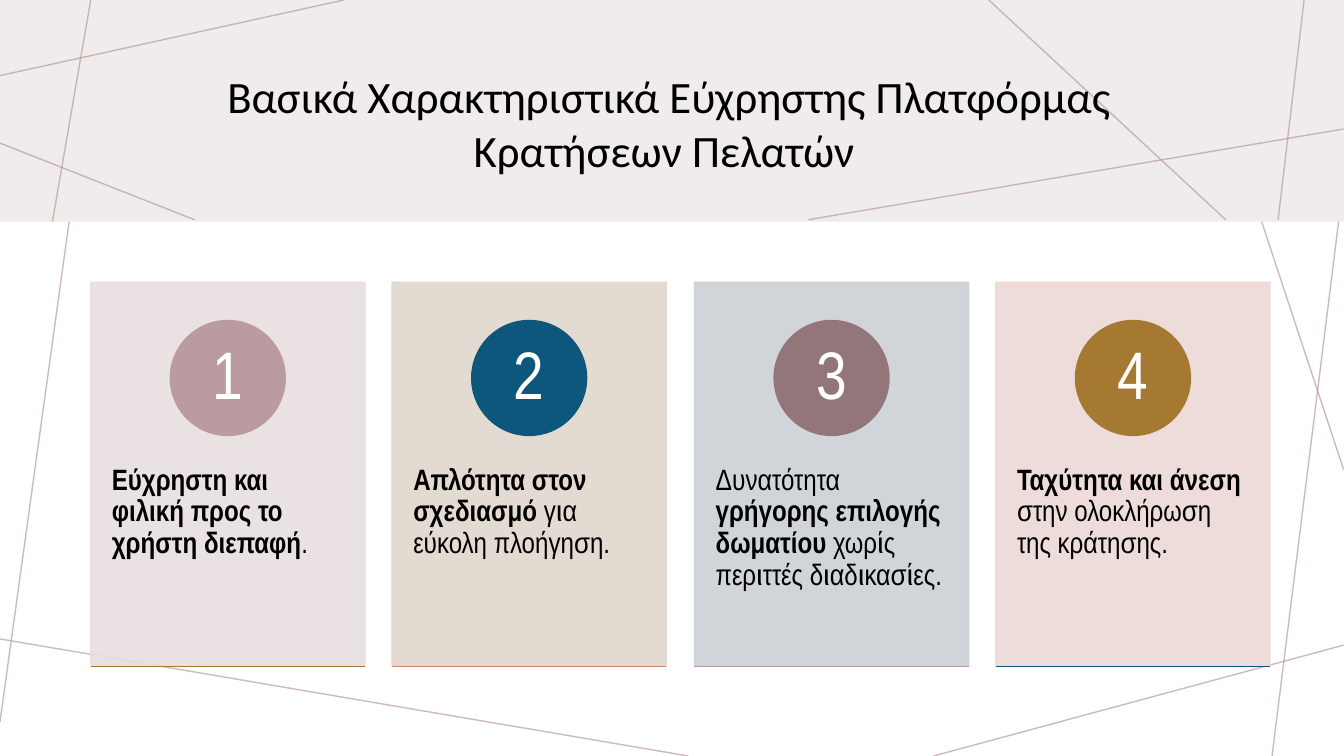
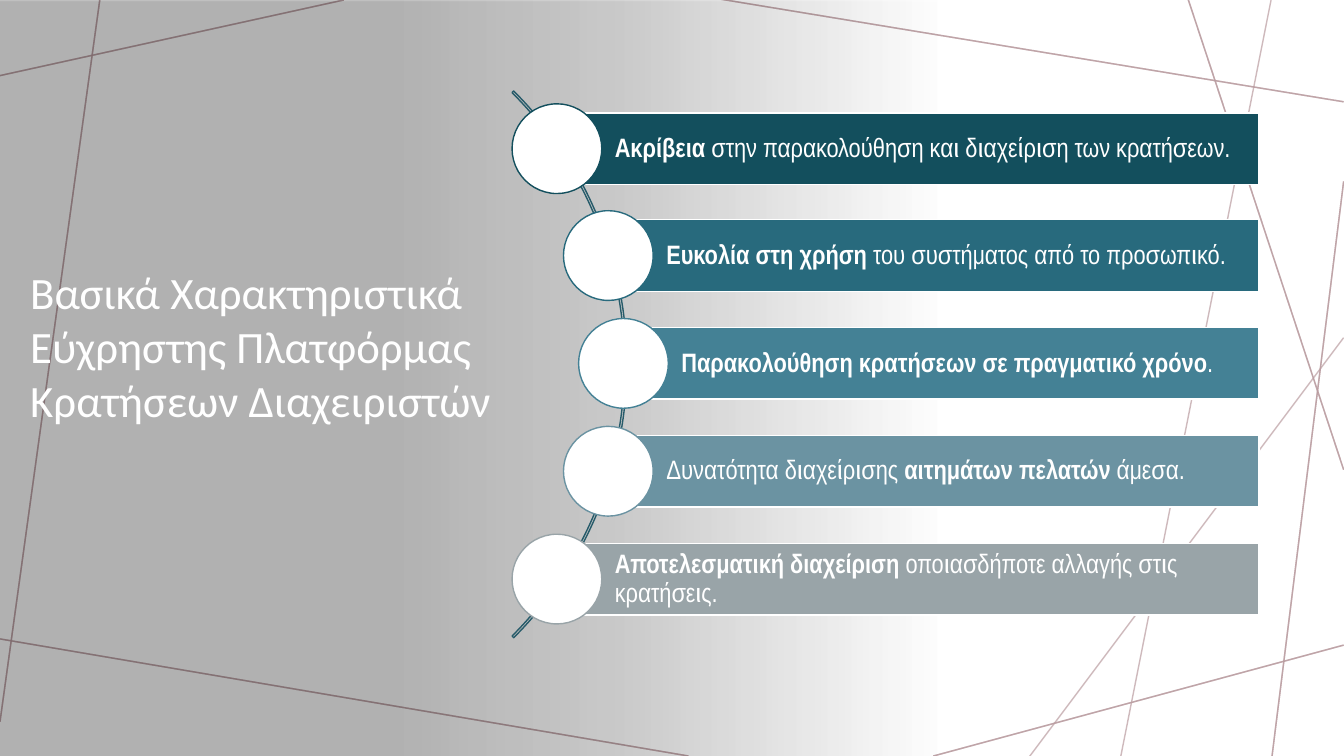
from lxml.etree import SubElement as Sub
from pptx import Presentation as Deck
from pptx.dml.color import RGBColor as Rgb
from pptx.enum.shapes import MSO_CONNECTOR as Conn, MSO_SHAPE as Geo
from pptx.enum.text import MSO_ANCHOR as Anchor, MSO_AUTO_SIZE as Auto, PP_ALIGN as Align
from pptx.oxml.ns import qn
from pptx.util import Emu, Pt

SCALE = 9144
ROSE = "BA9CA0"
BLUE = "0E577C"
GOLD = "A57931"
WHITE = "FFFFFF"
BLACK = "000000"
FRAME = [
    (341, 0, 0, 75),
    (99, 0, 0, 716),
    (683, 750, -5, 633),
    (1333, 640, 926, 750),
    (1333, 180, 1262, 750),
    (1333, 466, 1179, 0),
    (1333, 101, 714, -1),
]
BAND = [
    FRAME[0],
    (90, 0, 52, 220),
    (193, 218, 0, 142),
    (1333, 128, 802, 218),
    (1216, 218, 981, 0),
    (1294, -2, 1268, 218),
]
CROSS = [(1021, 751, 1333, 335), (1112, 750, 1261, 0)]
FADE = [(0, 0), (33, 20), (58, 30), (100, 30)]
CARDS = [
    ("E7DEDF", ROSE, GOLD,
     [("Εύχρηστη και φιλική προς το χρήστη διεπαφή", True), (".", False)]),
    ("E1D7CE", BLUE, "CC846E",
     [("Απλότητα στον σχεδιασμό", True), (" για εύκολη πλοήγηση.", False)]),
    ("CCD1D7", "93767A", ROSE,
     [("Δυνατότητα ", False), ("γρήγορης επιλογής δωματίου", True),
      (" χωρίς περιττές διαδικασίες.", False)]),
    ("ECD9D5", GOLD, BLUE,
     [("Ταχύτητα και άνεση", True), (" στην ολοκλήρωση της κράτησης.", False)]),
]
BARS = [
    (553, "134F5D",
     [("Ακρίβεια", True), (" στην παρακολούθηση και διαχείριση των κρατήσεων.", False)]),
    (604, "286A7D",
     [("Ευκολία στη χρήση", True), (" του συστήματος από το προσωπικό.", False)]),
    (619, "448195",
     [("Παρακολούθηση κρατήσεων σε πραγματικό χρόνο", True), (".", False)]),
    (604, "6B93A2",
     [("Δυνατότητα διαχείρισης ", False), ("αιτημάτων πελατών", True), (" άμεσα.", False)]),
    (553, "99A4A8",
     [("Αποτελεσματική διαχείριση", True), (" οποιασδήποτε αλλαγής στις κρατήσεις.", False)]),
]


def px(n):
    return Emu(n * SCALE)


def tint(code):
    return Rgb.from_string(code)


class Pen:
    head = "Calibri"
    body = "Arial Narrow"

    def __init__(self, deck):
        self.deck = deck
        self.slide = None

    def page(self):
        self.slide = self.deck.slides.add_slide(self.deck.slide_layouts[5])

    def alpha(self, item, part):
        for color in item.element.spPr.iter(qn("a:srgbClr")):
            Sub(color, qn("a:alpha"), val=str(part * 1000))

    def line(self, ends, color=ROSE, part=70):
        item = self.slide.shapes.add_connector(Conn.STRAIGHT, *map(px, ends))
        item.line.color.rgb = tint(color)
        item.line.width = Pt(1)
        if part < 100:
            self.alpha(item, part)
        Sub(item.element.spPr, qn("a:effectLst"))
        return item

    def lines(self, group):
        return [self.line(ends) for ends in group]

    def frame(self):
        tree = self.deck.slide_master.shapes.element
        for num, item in enumerate(self.lines(FRAME), 101):
            item.element.nvCxnSpPr.cNvPr.id = num
            tree.append(item.element)

    def shape(self, geo, box, fill=None, edge=None):
        item = self.slide.shapes.add_shape(geo, *map(px, box))
        item.shadow.inherit = False
        if fill:
            item.fill.solid()
            item.fill.fore_color.rgb = tint(fill)
        else:
            item.fill.background()
        if edge:
            item.line.color.rgb = tint(edge)
            item.line.width = Pt(1)
        else:
            item.line.fill.background()
        return item

    def veil(self, box, stops):
        item = self.shape(Geo.RECTANGLE, box)
        item.fill.gradient()
        item.fill.gradient_angle = 180
        group = item.element.spPr.find(qn("a:gradFill")).find(qn("a:gsLst"))
        for old in list(group):
            group.remove(old)
        for pos, part in stops:
            stop = Sub(group, qn("a:gs"), pos=str(pos * 1000))
            color = Sub(stop, qn("a:srgbClr"), val=BLACK)
            Sub(color, qn("a:alpha"), val=str(part * 1000))

    def text(self, item, runs, size, color, pads, align=Align.LEFT,
             anchor=Anchor.MIDDLE, font=body, space=0.9):
        frame = item.text_frame
        frame.word_wrap = True
        frame.vertical_anchor = anchor
        (frame.margin_left, frame.margin_top,
         frame.margin_right, frame.margin_bottom) = map(px, pads)
        para = frame.paragraphs[0]
        para.alignment = align
        para.line_spacing = space
        for words, bold in runs:
            run = para.add_run()
            run.text = words
            run.font.name = font
            run.font.size = Pt(size)
            run.font.bold = bold
            run.font.color.rgb = tint(color)

    def title(self, words, box, color, align):
        item = self.slide.shapes.title
        item.left, item.top, item.width, item.height = map(px, box)
        self.text(item, [(words, False)], 32, color, (10, 5, 10, 5), align,
                  Anchor.TOP, self.head, 1.0)
        item.text_frame.auto_size = Auto.SHAPE_TO_FIT_TEXT
        self.slide.shapes.element.append(item.element)

    def card(self, num, left, fill, dot, rule, runs):
        top, wide, high, disc = 280, 272, 381, 114
        base = top + high
        item = self.shape(Geo.RECTANGLE, (left, top, wide, high), fill, fill)
        self.alpha(item, 90)
        self.text(item, runs, 21, BLACK, (21, 181, 21, 36), anchor=Anchor.TOP)
        spot = (left + (wide - disc) // 2, top + 38, disc, disc)
        item = self.shape(Geo.OVAL, spot, dot, dot)
        self.text(item, [(str(num), False)], 48, WHITE, (9, 1, 9, 1), Align.CENTER)
        self.line((left, base, left + wide, base), rule, 100)

    def bar(self, left, top, color, runs):
        item = self.shape(Geo.RECTANGLE, (left, top, 1249 - left, 71), color, WHITE)
        self.text(item, runs, 19, WHITE, (57, 5, 5, 5))
        self.shape(Geo.OVAL, (left - 45, top - 9, 89, 89), WHITE, color)


def guests(pen):
    pen.page()
    pen.frame()
    pen.shape(Geo.RECTANGLE, (0, 0, 1334, 220), "F0ECEC")
    pen.lines(BAND)
    for num, card in enumerate(CARDS):
        pen.card(num + 1, round(90 + num * 898 / 3), *card)
    pen.title("Βασικά Χαρακτηριστικά Εύχρηστης Πλατφόρμας Κρατήσεων Πελατών ",
              (135, 63, 1058, 118), BLACK, Align.CENTER)


def staff(pen):
    pen.page()
    pen.lines(FRAME)
    pen.veil((0, 1, 932, 750), FADE)
    pen.lines(CROSS)
    arc = pen.shape(Geo.BLOCK_ARC, (-145, -22, 767, 767), edge="275B6A")
    for num, turn in enumerate((189, 27, 0.003)):
        arc.adjustments[num] = turn
    for num, (left, color, runs) in enumerate(BARS):
        pen.bar(left, 112 + num * 427 // 4, color, runs)
    pen.title("Βασικά Χαρακτηριστικά Εύχρηστης Πλατφόρμας Κρατήσεων Διαχειριστών",
              (20, 258, 558, 172), WHITE, Align.LEFT)


def main():
    deck = Deck()
    deck.slide_width = Emu(12192000)
    deck.slide_height = px(750)
    pen = Pen(deck)
    guests(pen)
    staff(pen)
    deck.save("out.pptx")


if __name__ == "__main__":
    main()
